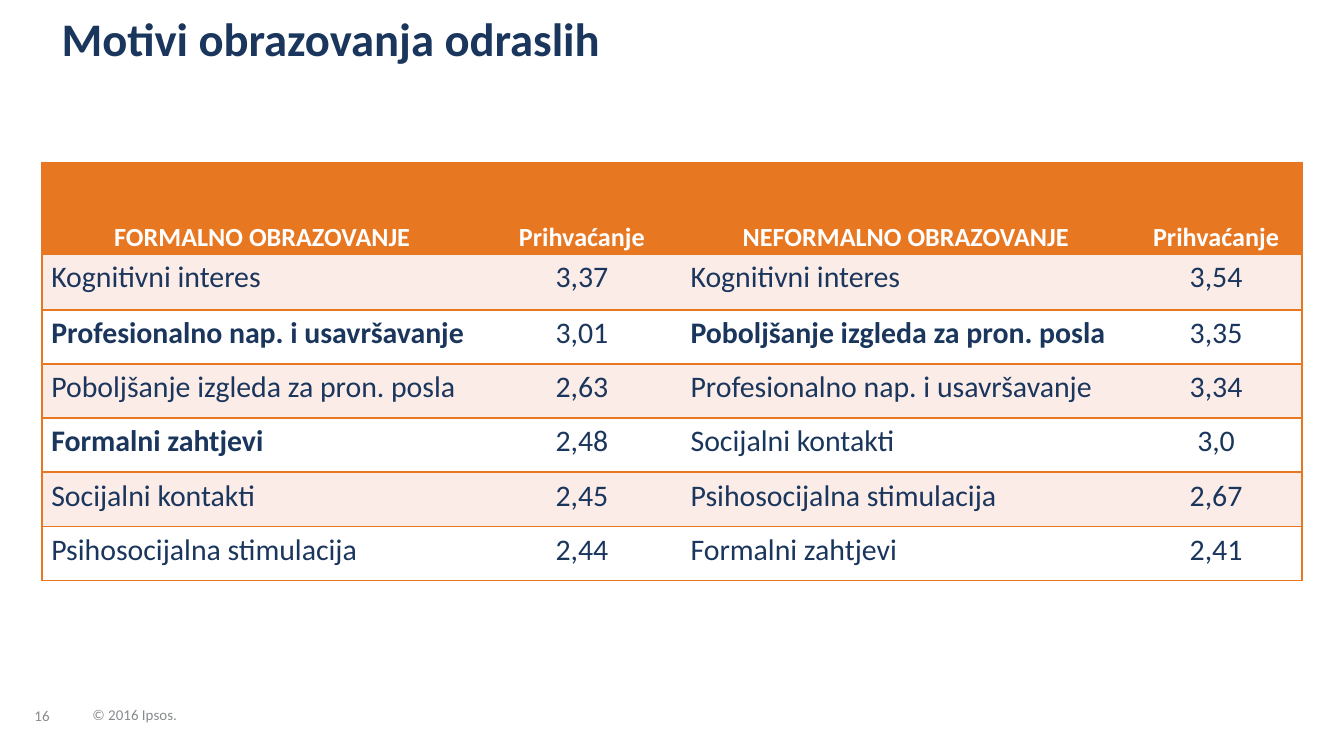
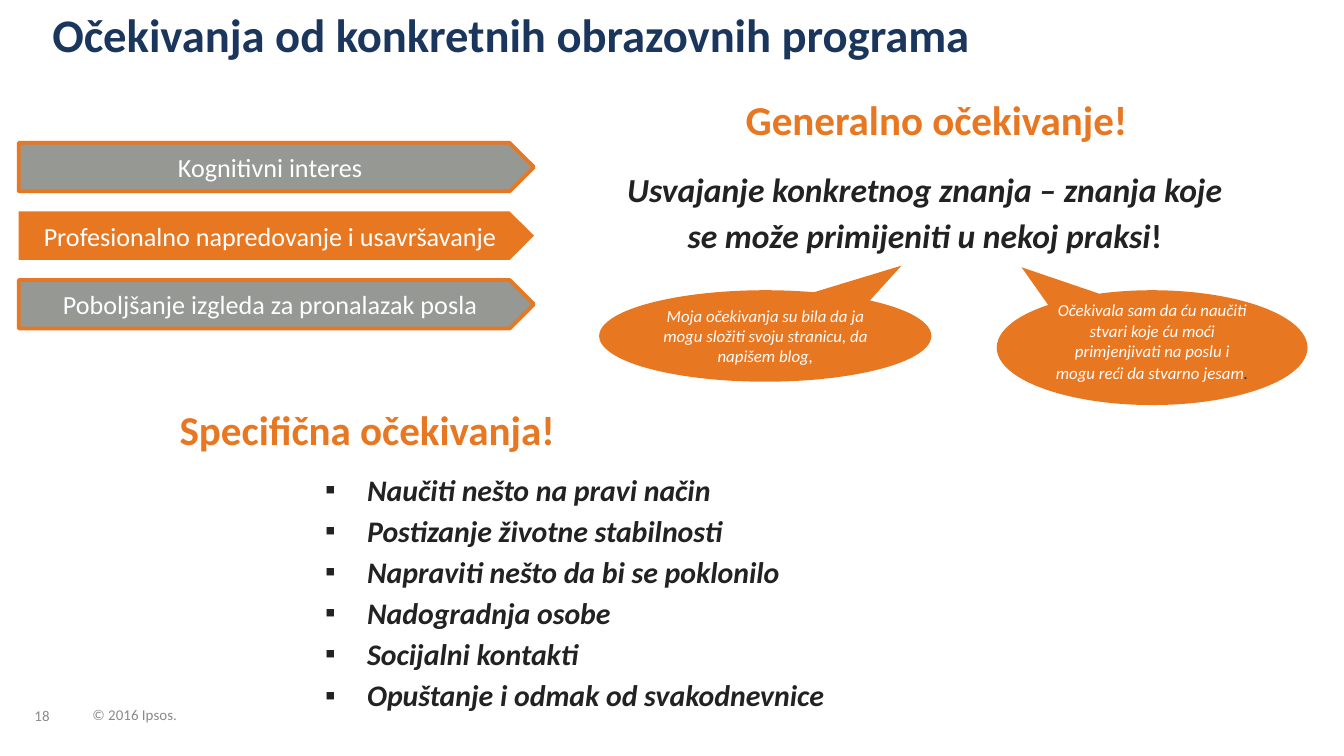
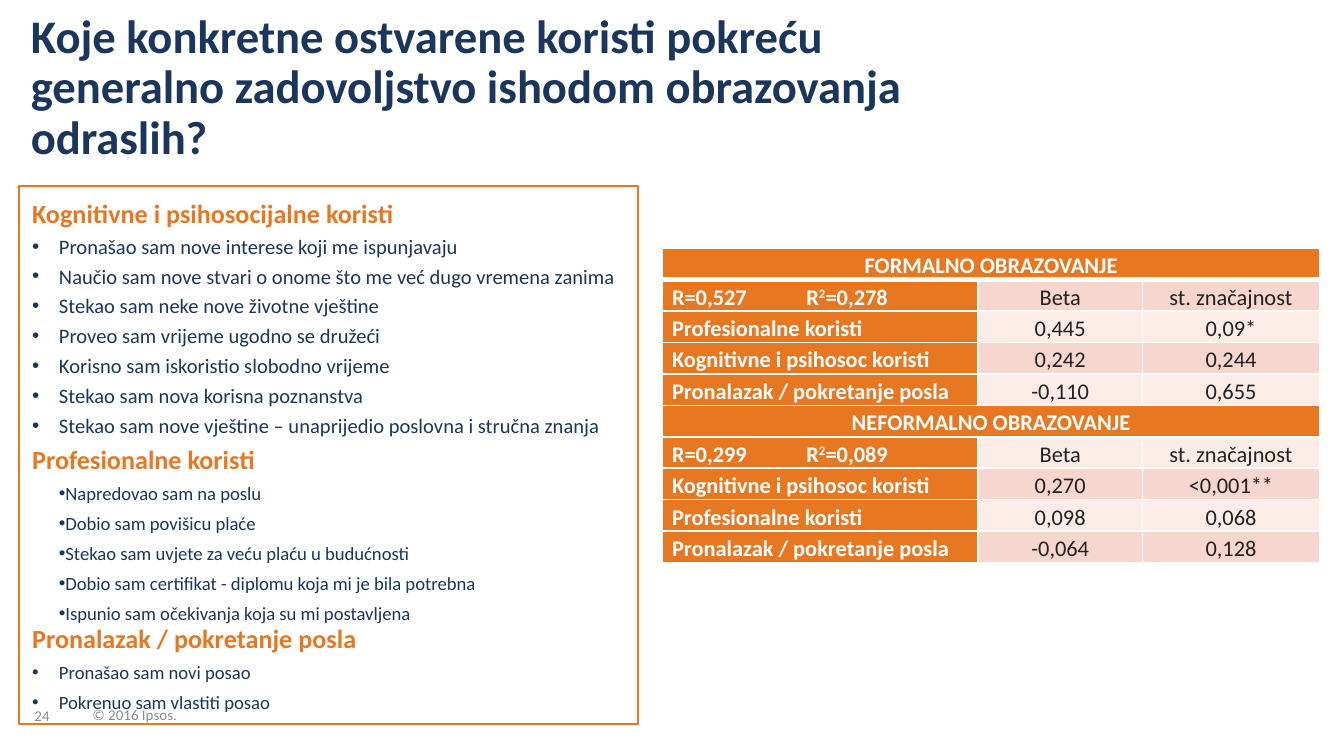
from dataclasses import dataclass

from lxml.etree import SubElement
from pptx import Presentation
from pptx.dml.color import RGBColor as Rgb
from pptx.enum.shapes import MSO_SHAPE as Kind
from pptx.enum.text import MSO_ANCHOR as Anchor, MSO_AUTO_SIZE as Auto, PP_ALIGN as Align
from pptx.oxml.ns import qn
from pptx.util import Pt


@dataclass(frozen=True)
class Theme:
    font: str = "Calibri"
    navy: str = "1B365D"
    orange: str = "E87722"
    gray: str = "969894"
    faint: str = "888B8D"
    ink: str = "222223"
    slate: str = "323E4F"
    white: str = "FFFFFF"
    pale: str = "FBECE8"
    rose: str = "F6D6CD"
    title: int = 25
    head: int = 22
    lead: int = 18
    body: int = 16
    label: int = 14
    cell: int = 12
    item: int = 11
    minor: int = 10
    quote: int = 9
    foot: int = 8


@dataclass(frozen=True)
class Box:
    x: float
    y: float
    w: float
    h: float

    def pts(self):
        return Pt(self.x), Pt(self.y), Pt(self.w), Pt(self.h)

    def inner(self, x, y, w, h):
        return Box(self.x + x, self.y + y, w, h)


T = Theme()


def say(frame, words, size=T.body, color=T.ink, bold=False, italic=False, align=Align.LEFT,
        lead=1.0, left=0, first=0, mark=None, tab=None, join=False, base=None):
    par = frame.paragraphs[-1]
    if not join:
        if par.runs:
            par = frame.add_paragraph()
        par.alignment = align
        par.line_spacing = lead
        par.space_before = par.space_after = Pt(0)
        props = par._p.get_or_add_pPr()
        props.set("marL", str(Pt(left)))
        props.set("indent", str(Pt(first)))
        if mark:
            SubElement(props, qn("a:buChar")).set("char", mark)
        else:
            SubElement(props, qn("a:buNone"))
        if tab:
            stop = SubElement(SubElement(props, qn("a:tabLst")), qn("a:tab"))
            stop.set("pos", str(Pt(tab)))
            stop.set("algn", "l")
    run = par.add_run()
    run.text = words
    font = run.font
    font.name, font.size, font.bold, font.italic = T.font, Pt(size), bold, italic
    font.color.rgb = Rgb.from_string(color)
    if base:
        run._r.get_or_add_rPr().set("baseline", str(base * 1000))


def setup(frame, anchor=Anchor.TOP, pad=(0, 0, 0, 0)):
    frame.word_wrap = True
    frame.auto_size = Auto.NONE
    frame.vertical_anchor = anchor
    frame.margin_left, frame.margin_top, frame.margin_right, frame.margin_bottom = map(Pt, pad)
    return frame


INSET = (7.2, 3.6, 7.2, 3.6)


def label(slide, box, anchor=Anchor.TOP, pad=(0, 0, 0, 0)):
    return setup(slide.shapes.add_textbox(*box.pts()).text_frame, anchor, pad)


def place(holder, box, pad=(0, 0, 0, 0)):
    holder.left, holder.top, holder.width, holder.height = box.pts()
    return setup(holder.text_frame, pad=pad)


def figure(slide, kind, box, fill, line=None, pad=INSET):
    shape = slide.shapes.add_shape(kind, *box.pts())
    shape.shadow.inherit = False
    shape.fill.solid()
    shape.fill.fore_color.rgb = Rgb.from_string(fill)
    if line:
        shape.line.color.rgb = Rgb.from_string(line)
        shape.line.width = Pt(2)
    else:
        shape.line.fill.background()
    setup(shape.text_frame, Anchor.MIDDLE, pad)
    return shape


def start(deck, layout, title, box, number):
    slide = deck.slides.add_slide(deck.slide_layouts[layout])
    frame = place(slide.shapes.title, box)
    say(frame, title, size=T.title, color=T.navy, bold=True, lead=0.9)
    for words, spot in ((number, Box(18.5, 369.5, 24.5, 18.5)),
                        ("© 2016 Ipsos.", Box(49.5, 374.5, 54.5, 13))):
        say(label(slide, spot, Anchor.BOTTOM), words, size=T.foot, color=T.faint, lead=0.85)
    return slide


def grid(slide, box, cols, rows):
    table = slide.shapes.add_table(len(rows), len(cols), *box.pts()).table
    table.first_row = table.horz_banding = False
    for col, width in zip(table.columns, cols):
        col.width = Pt(width)
    for row, height in zip(table.rows, rows):
        row.height = Pt(height)
    return table


def paint(cell, fill, edges, anchor=Anchor.TOP):
    cell.margin_left = cell.margin_right = Pt(5)
    cell.margin_top = cell.margin_bottom = 0
    cell.vertical_anchor = anchor
    cell.fill.solid()
    cell.fill.fore_color.rgb = Rgb.from_string(fill)
    props = cell._tc.get_or_add_tcPr()
    for i, side in enumerate("LRTB"):
        line = SubElement(props, qn("a:ln" + side))
        props.insert(i, line)
        if side in edges:
            color, width = edges[side]
            line.set("w", str(Pt(width)))
            solid = SubElement(line, qn("a:solidFill"))
            SubElement(solid, qn("a:srgbClr")).set("val", color)
        else:
            SubElement(line, qn("a:noFill"))
    return cell.text_frame


def motives(slide, box):
    data = [
        ("FORMALNO OBRAZOVANJE", "Prihvaćanje", "NEFORMALNO OBRAZOVANJE", "Prihvaćanje"),
        ("Kognitivni interes", "3,37", "Kognitivni interes", "3,54"),
        ("Profesionalno nap. i usavršavanje", "3,01", "Poboljšanje izgleda za pron. posla", "3,35"),
        ("Poboljšanje izgleda za pron. posla", "2,63", "Profesionalno nap. i usavršavanje", "3,34"),
        ("Formalni zahtjevi", "2,48", "Socijalni kontakti", "3,0"),
        ("Socijalni kontakti", "2,45", "Psihosocijalna stimulacija", "2,67"),
        ("Psihosocijalna stimulacija", "2,44", "Formalni zahtjevi", "2,41"),
    ]
    strong = {(2, 0), (2, 2), (4, 0)}
    table = grid(slide, box, (236, 106.5, 240.5, 92), [49, 30] + [29] * 5)
    rule = (T.orange, 1)
    for r, row in enumerate(data):
        for c, words in enumerate(row):
            edges = {"T": rule, "B": rule}
            if c == 0:
                edges["L"] = rule
            if c == 3:
                edges["R"] = rule
            top = r == 0
            fill = T.orange if top else T.pale if r % 2 else T.white
            frame = paint(table.cell(r, c), fill, edges, Anchor.BOTTOM if top else Anchor.TOP)
            say(frame, words, size=T.label if top else T.body,
                color=T.white if top else T.navy, bold=top or (r, c) in strong,
                align=Align.CENTER if top or c % 2 else Align.LEFT, lead=1.15)


def arrows(slide, box):
    names = (("Kognitivni interes", T.gray, T.orange),
             ("Profesionalno napredovanje i usavršavanje", T.orange, None),
             ("Poboljšanje izgleda za pronalazak posla", T.gray, T.orange))
    high = 26
    step = (box.h - high) / (len(names) - 1)
    for i, (words, fill, line) in enumerate(names):
        shape = figure(slide, Kind.PENTAGON, box.inner(0, i * step, box.w, high), fill, line)
        say(shape.text_frame, words, size=T.label, color=T.white, align=Align.CENTER)


def header(slide, words, box):
    say(label(slide, box), words, size=T.head, color=T.orange, bold=True, align=Align.CENTER)


def bubble(slide, box, tip, words, pad=INSET):
    shape = figure(slide, Kind.OVAL_CALLOUT, box, T.orange, pad=pad)
    shape.adjustments[0], shape.adjustments[1] = tip
    say(shape.text_frame, words, size=T.quote, color=T.white, italic=True, align=Align.CENTER)
    return shape.text_frame


def general(slide, box):
    header(slide, "Generalno očekivanje!", box.inner(77, 0, 207.5, 26.5))
    frame = label(slide, box.inner(0, 33, 349, 57.5), pad=INSET)
    say(frame, "Usvajanje konkretnog znanja – znanja koje se može primijeniti u nekoj praksi",
        size=T.lead, bold=True, italic=True, align=Align.CENTER, lead=1.15)
    say(frame, "!", size=T.lead, bold=True, join=True)
    bubble(slide, box.inner(0, 105, 178, 49), (0.41, -0.77),
           "Moja očekivanja su bila da ja mogu složiti svoju stranicu, da napišem blog,")
    frame = bubble(slide, box.inner(213, 105, 166.5, 61.5), (-0.42, -0.7),
                   "Očekivala sam da ću naučiti stvari koje ću moći primjenjivati na poslu "
                   "i mogu reći da stvarno jesam", pad=(7.2, 3.6, 7.2, 10))
    say(frame, ".", size=T.minor, color=T.slate, italic=True, join=True)


def special(slide, box):
    header(slide, "Specifična očekivanja!", box.inner(0, 0, 207.5, 26.5))
    frame = place(slide.placeholders[1], box.inner(74, 29.5, box.w - 74, 144), INSET)
    for words in ("Naučiti nešto na pravi način", "Postizanje životne stabilnosti",
                  "Napraviti nešto da bi se poklonilo", "Nadogradnja osobe",
                  "Socijalni kontakti", "Opuštanje i odmak od svakodnevnice"):
        say(frame, words, bold=True, italic=True, lead=1.15, left=22.5, first=-22.5, mark="▪")


def gains(slide, box):
    holder = slide.placeholders[1]
    frame = place(holder, box, INSET)
    holder.line.color.rgb = Rgb.from_string(T.orange)
    holder.line.width = Pt(1)
    hang = dict(left=14.4, first=-14.4)
    groups = (
        ("Kognitivne i psihosocijalne koristi", 1.15, T.item, hang,
         ("Pronašao sam nove interese koji me ispunjavaju",
          "Naučio sam nove stvari o onome što me već dugo vremena zanima",
          "Stekao sam neke nove životne vještine",
          "Proveo sam vrijeme ugodno se družeći",
          "Korisno sam iskoristio slobodno vrijeme",
          "Stekao sam nova korisna poznanstva",
          "Stekao sam nove vještine – unaprijedio poslovna i stručna znanja")),
        ("Profesionalne koristi", Pt(20), T.minor, dict(first=14.4),
         ("Napredovao sam na poslu",
          "Dobio sam povišicu plaće",
          "Stekao sam uvjete za veću plaću u budućnosti",
          "Dobio sam certifikat - diplomu koja mi je bila potrebna",
          "Ispunio sam očekivanja koja su mi postavljena")),
        ("Pronalazak / pokretanje posla", Pt(16), T.minor, hang,
         ("Pronašao sam novi posao", "Pokrenuo sam vlastiti posao")),
    )
    for name, lead, size, dent, items in groups:
        say(frame, name, size=T.label, color=T.orange, bold=True, lead=lead)
        for words in items:
            say(frame, words, size=size, color=T.navy, lead=Pt(16), mark="•", **dent)


def models(slide, box):
    work, mind, job = ("Profesionalne koristi", "Kognitivne i psihosoc koristi",
                       "Pronalazak / pokretanje posla")
    data = [
        ("FORMALNO OBRAZOVANJE", "", ""),
        (("R=0,527\tR", "2", "=0,278"), "Beta", "st. značajnost"),
        (work, "0,445", "0,09*"),
        (mind, "0,242", "0,244"),
        (job, "-0,110", "0,655"),
        ("NEFORMALNO OBRAZOVANJE", "", ""),
        (("R=0,299\tR", "2", "=0,089"), "Beta", "st. značajnost"),
        (mind, "0,270", "<0,001**"),
        (work, "0,098", "0,068"),
        (job, "-0,064", "0,128"),
    ]
    table = grid(slide, box, (169, 88, 95), [box.h / len(data)] * len(data))
    for r, row in enumerate(data):
        band = not row[1]
        edges = dict.fromkeys("LRTB", (T.white, 1))
        if r == 0:
            edges["B"] = (T.white, 3)
        if band:
            table.cell(r, 0).merge(table.cell(r, 2))
        for c, words in enumerate(row):
            main = band or c == 0
            fill = T.orange if main else T.rose if r % 2 else T.pale
            frame = paint(table.cell(r, c), fill, edges)
            look = dict(size=T.cell, color=T.white if main else T.ink, bold=main)
            if isinstance(words, tuple):
                lead, power, rest = words
                say(frame, lead, lead=1.15, tab=61.5, **look)
                say(frame, power, base=30, join=True, **look)
                say(frame, rest, join=True, **look)
            elif words:
                align = Align.CENTER if band or c else Align.LEFT
                say(frame, words, align=align, lead=1.15, **look)


def main():
    deck = Presentation()
    deck.slide_width, deck.slide_height = Pt(720), Pt(405)

    slide = start(deck, 5, "Motivi obrazovanja odraslih", Box(33, 8.5, 487, 27.5), "16")
    motives(slide, Box(22.5, 87, 675, 224))

    slide = start(deck, 1, "Očekivanja od konkretnih obrazovnih programa",
                  Box(28, 6.5, 516, 27.5), "18")
    arrows(slide, Box(10, 76.5, 276, 99.5))
    general(slide, Box(321, 50.5, 380, 167))
    special(slide, Box(93, 216.5, 627, 174))

    slide = start(deck, 1, "Koje konkretne ostvarene koristi pokreću generalno zadovoljstvo "
                  "ishodom obrazovanja odraslih?", Box(16.5, 7, 529, 82), "24")
    gains(slide, Box(10, 99.5, 332, 288.5))
    models(slide, Box(355, 133, 352, 165))

    deck.save("out.pptx")


if __name__ == "__main__":
    main()
